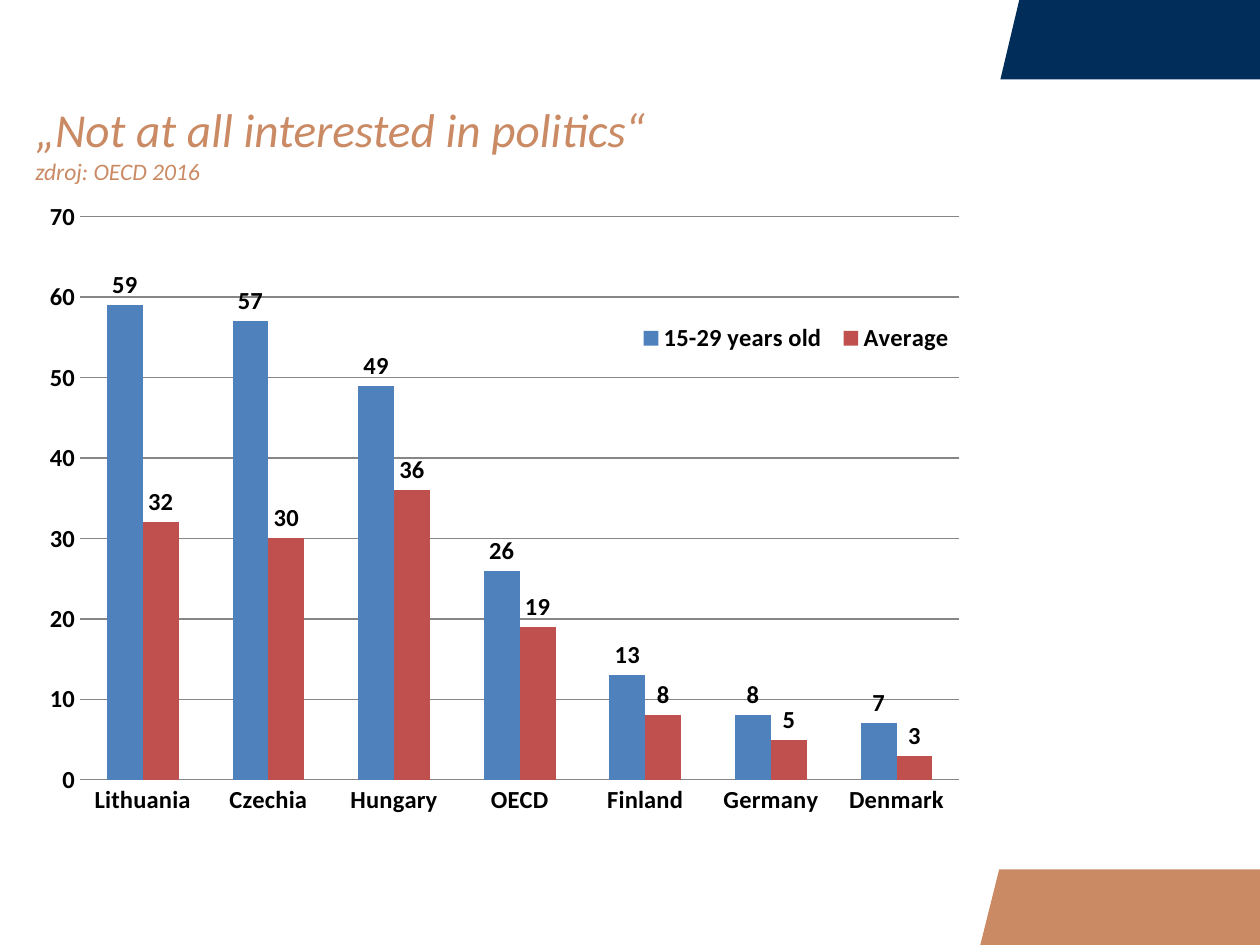
from lxml.etree import SubElement
from pptx import Presentation
from pptx.chart.data import CategoryChartData
from pptx.dml.color import RGBColor
from pptx.enum.chart import XL_CHART_TYPE, XL_LABEL_POSITION, XL_LEGEND_POSITION, XL_TICK_MARK
from pptx.enum.text import MSO_ANCHOR, MSO_AUTO_SIZE, PP_ALIGN
from pptx.oxml.ns import qn
from pptx.util import Inches, Pt

NAVY, TAN, BLACK, GREY = "002D5A", "CA8A64", "000000", "868686"
TITLE = [("„Not at all interested in politics“", 27), ("zdroj: OECD 2016", 13.5)]
COUNTRIES = ["Lithuania", "Czechia", "Hungary", "OECD", "Finland", "Germany", "Denmark"]
SERIES = [
    ("15-29 years old", "4F81BD", [59, 57, 49, 26, 13, 8, 7]),
    ("Average", "C0504D", [32, 30, 36, 19, 8, 5, 3]),
]
BANDS = [
    (NAVY, [(7.94, 0.63), (8.09, 0), (10, 0), (10, 0.63)]),
    (TAN, [(7.78, 7.5), (7.93, 6.9), (10, 6.9), (10, 7.5)]),
]
CHART_BOX = (0.15, 1.5, 9.28, 5.13)
PLOT_BOX = (0.635, 1.72, 6.98, 4.47)
LEGEND_BOX = (5.0, 2.53, 2.64, 0.31)


def color(text):
    return RGBColor.from_string(text)


def paint(fill, text):
    fill.solid()
    fill.fore_color.rgb = color(text)


def style(font, size, tone, **format):
    font.size, font.color.rgb = Pt(size), color(tone)
    for name, value in {"name": "Calibri", **format}.items():
        setattr(font, name, value)


def place(item, box, inner=False):
    """Fix a chart part at a slide position given in inches."""
    layout = item.find(qn("c:layout"))
    if layout is None:
        layout = SubElement(item, qn("c:layout"))
        before = item.find(qn("c:legendPos"))
        if before is not None:
            before.addnext(layout)
        else:
            item.insert(0, layout)
    for child in list(layout):
        layout.remove(child)
    manual = SubElement(layout, qn("c:manualLayout"))
    left, top, width, height = CHART_BOX
    x, y, w, h = box
    parts = {"layoutTarget": "inner"} if inner else {}
    parts |= {"xMode": "edge", "yMode": "edge"}
    parts |= {"x": (x - left) / width, "y": (y - top) / height, "w": w / width, "h": h / height}
    for name, value in parts.items():
        SubElement(manual, qn(f"c:{name}")).set("val", str(value))


def add_band(slide, tone, points):
    first, *rest = [(Inches(x), Inches(y)) for x, y in points]
    pen = slide.shapes.build_freeform(*first)
    pen.add_line_segments(rest, close=True)
    band = pen.convert_to_shape()
    band.shadow.inherit = False
    paint(band.fill, tone)
    band.line.fill.background()


def add_title(slide):
    title = slide.shapes.title
    title.left, title.top, title.width, title.height = map(Inches, (0, 0.63, 10, 1.01))
    frame = title.text_frame
    format = {
        "margin_left": Inches(0.28), "margin_right": Inches(0.28),
        "margin_top": Inches(0.05), "margin_bottom": Inches(0.05),
        "vertical_anchor": MSO_ANCHOR.MIDDLE, "word_wrap": True,
        "auto_size": MSO_AUTO_SIZE.NONE,
    }
    for name, value in format.items():
        setattr(frame, name, value)
    line = frame.paragraphs[0]
    line.alignment = PP_ALIGN.LEFT
    for i, (text, size) in enumerate(TITLE):
        if i:
            line.add_line_break()
        run = line.add_run()
        run.text = text
        style(run.font, size, TAN, italic=True)


def add_bars(slide):
    data = CategoryChartData()
    data.categories = COUNTRIES
    for name, _, values in SERIES:
        data.add_series(name, values)
    chart = slide.shapes.add_chart(
        XL_CHART_TYPE.COLUMN_CLUSTERED, *map(Inches, CHART_BOX), data).chart
    style(chart.font, 14, BLACK, bold=True)
    chart.has_title = False

    plot = chart.plots[0]
    plot.gap_width, plot.overlap, plot.vary_by_categories = 150, 0, False
    for series, (_, tone, _) in zip(plot.series, SERIES):
        paint(series.format.fill, tone)
        labels = series.data_labels
        labels.show_value = True
        labels.position = XL_LABEL_POSITION.OUTSIDE_END

    for axis in (chart.category_axis, chart.value_axis):
        axis.format.line.fill.background()
        axis.major_tick_mark = axis.minor_tick_mark = XL_TICK_MARK.NONE
    scale = chart.value_axis
    scale.minimum_scale, scale.maximum_scale, scale.major_unit = 0, 70, 10
    scale.has_major_gridlines = True
    grid = scale.major_gridlines.format.line
    grid.color.rgb, grid.width = color(GREY), Pt(0.75)

    chart.has_legend = True
    legend = chart.legend
    legend.position, legend.include_in_layout = XL_LEGEND_POSITION.RIGHT, False
    area = chart.element.find(".//" + qn("c:plotArea"))
    place(area, PLOT_BOX, inner=True)
    place(chart.element.find(".//" + qn("c:legend")), LEGEND_BOX)


def main():
    deck = Presentation()
    deck.slide_width, deck.slide_height = Inches(10), Inches(7.5)
    slide = deck.slides.add_slide(deck.slide_layouts[5])
    for tone, points in BANDS:
        add_band(slide, tone, points)
    add_title(slide)
    add_bars(slide)
    deck.save("out.pptx")


if __name__ == "__main__":
    main()
